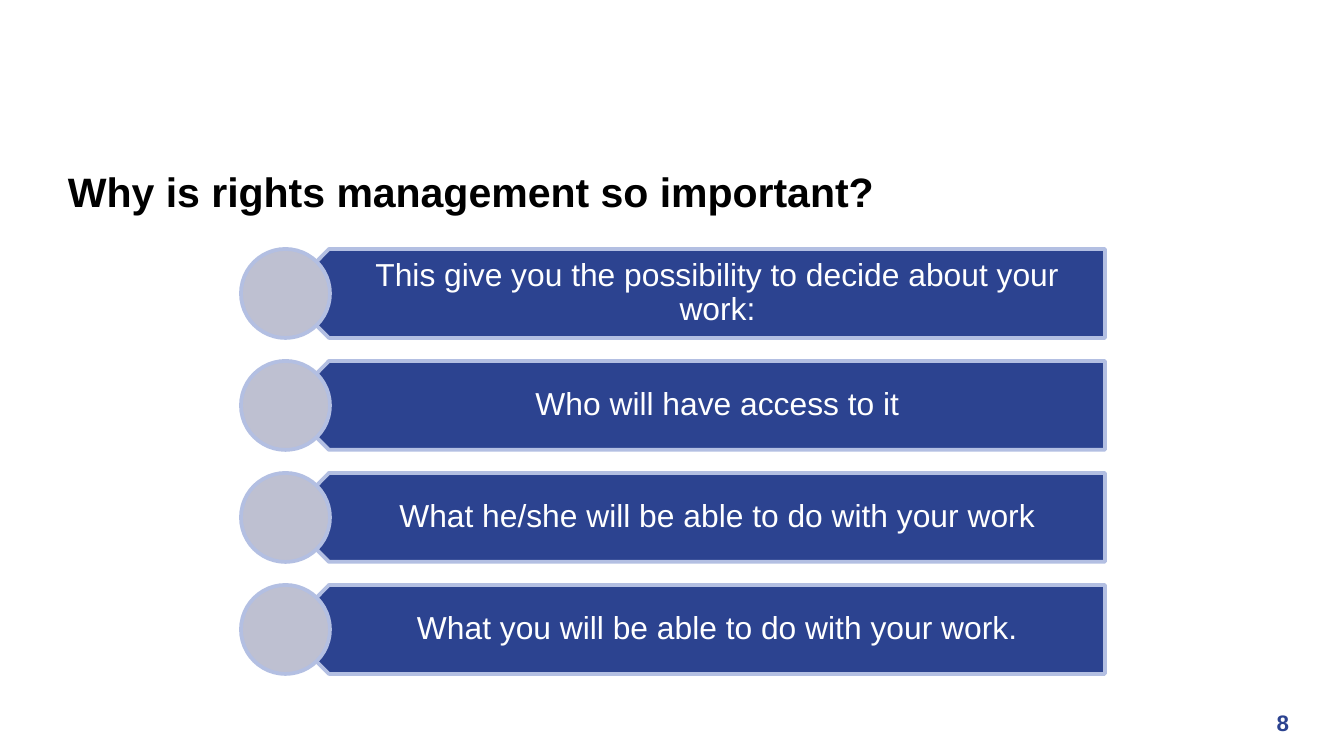
"""Builds the slide on why rights management is important."""
from dataclasses import dataclass

from pptx import Presentation, util as u
from pptx.dml.color import RGBColor
from pptx.enum import shapes, text

SCALE = 9144000 / 1344


@dataclass(frozen=True)
class Theme:
    font: str = "Arial"
    black: str = "000000"
    white: str = "FFFFFF"
    blue: str = "2C4390"
    grey: str = "BEC0D1"
    edge: str = "B3BFE2"
    title_size: int = 22
    body_size: int = 17
    number_size: int = 12
    line_width: int = 2


T = Theme()
REASONS = (
    "This give you the possibility to decide about your work:",
    "Who will have access to it",
    "What he/she will be able to do with your work",
    "What you will be able to do with your work.",
)


def px(n):
    return u.Emu(round(n * SCALE))


def write(sp, content, size, color, bold=False, align=text.PP_ALIGN.LEFT,
          anchor=text.MSO_ANCHOR.MIDDLE, insets=(13, 7, 13, 7), spacing=1.0):
    tf = sp.text_frame
    tf.word_wrap = True
    tf.auto_size = text.MSO_AUTO_SIZE.NONE
    tf.vertical_anchor = anchor
    tf.margin_left, tf.margin_top, tf.margin_right, tf.margin_bottom = map(px, insets)
    p = tf.paragraphs[0]
    p.alignment = align
    p.line_spacing = spacing
    r = p.add_run()
    r.text = content
    r.font.name = T.font
    r.font.size = u.Pt(size)
    r.font.bold = bold
    r.font.color.rgb = RGBColor.from_string(color)


def paint(sp, fill):
    sp.shadow.inherit = False
    sp.fill.solid()
    sp.fill.fore_color.rgb = RGBColor.from_string(fill)
    sp.line.color.rgb = RGBColor.from_string(T.edge)
    sp.line.width = u.Pt(T.line_width)


def add_title(s, content):
    sp = s.shapes.title
    sp.left, sp.top, sp.width, sp.height = map(px, (55, 159, 1234, 91))
    write(sp, content, T.title_size, T.black, bold=True, anchor=text.MSO_ANCHOR.TOP)


def add_bar(s, x, y, w, h, content):
    right, bottom, notch = x + w, y + h, x + h // 2
    fb = s.shapes.build_freeform(right, bottom, scale=SCALE)
    fb.add_line_segments([(notch, bottom), (x, y + h / 2), (notch, y), (right, y)])
    sp = fb.convert_to_shape()
    paint(sp, T.blue)
    write(sp, content, T.body_size, T.white, align=text.PP_ALIGN.CENTER,
          insets=(62, 9, 17, 9), spacing=0.9)


def add_circle(s, x, y, d):
    sp = s.shapes.add_shape(shapes.MSO_SHAPE.OVAL, px(x), px(y), px(d), px(d))
    paint(sp, T.grey)


def add_reasons(s, reasons, x=285, top=249, w=820, h=89, pitch=112):
    for i, reason in enumerate(reasons):
        y = top + i * pitch
        add_bar(s, x, y, w, h, reason)
        add_circle(s, x - h // 2, y, h)


def add_page_number(s, number):
    sp = s.shapes.add_textbox(px(1215), px(703), px(74), px(40))
    write(sp, str(number), T.number_size, T.blue, bold=True,
          align=text.PP_ALIGN.RIGHT, insets=(13, 7, 0, 7))


def main():
    prs = Presentation()
    prs.slide_width, prs.slide_height = px(1344), px(756)
    s = prs.slides.add_slide(prs.slide_layouts.get_by_name("Title Only"))
    add_title(s, "Why is rights management so important?")
    add_reasons(s, REASONS)
    add_page_number(s, 8)
    prs.save("out.pptx")


if __name__ == "__main__":
    main()
